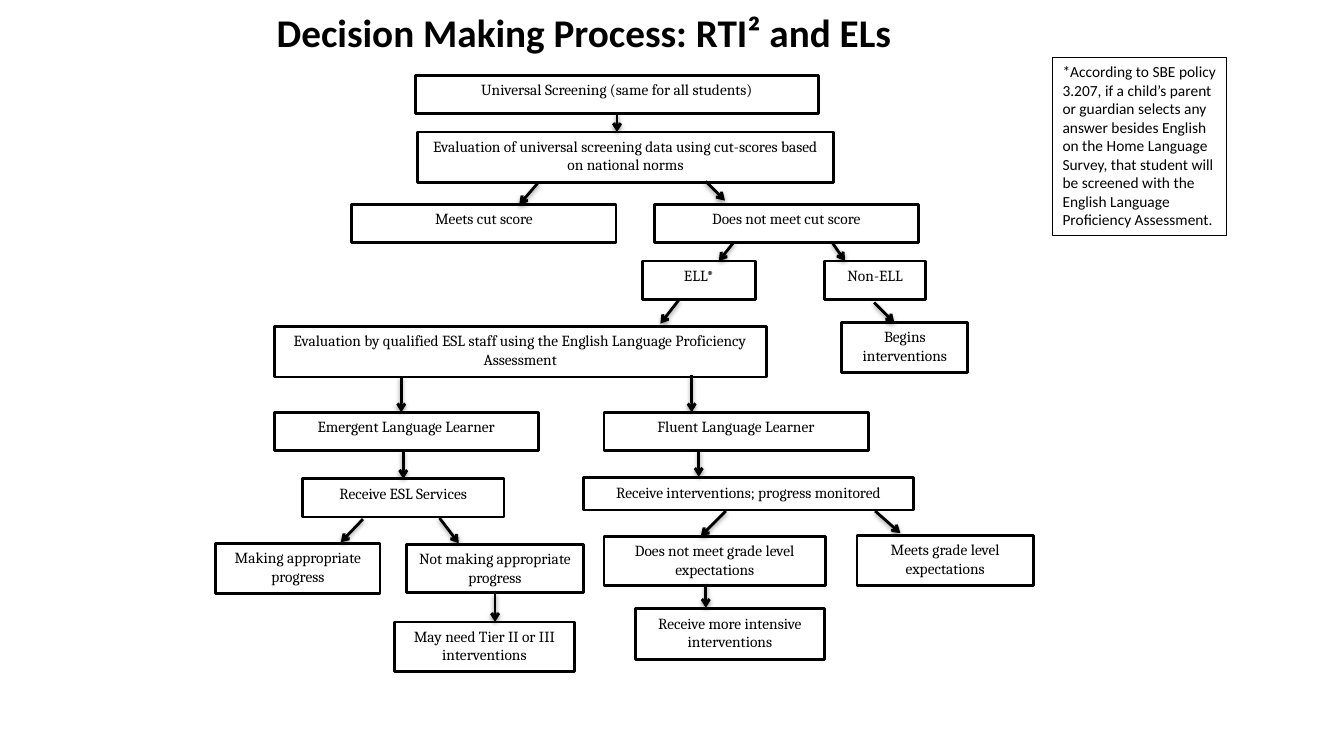
from dataclasses import dataclass

from lxml import etree
from pptx import Presentation
from pptx import util as u
from pptx.dml import color
from pptx.enum import shapes, text
from pptx.oxml import ns

PX = 9144


@dataclass(frozen=True)
class Theme:
    ink: color.RGBColor = color.RGBColor(0, 0, 0)
    paper: color.RGBColor = color.RGBColor(255, 255, 255)
    head: str = "Calibri"
    body: str = "Cambria"
    big: int = 28
    small: int = 11
    thick: float = 2
    thin: float = 0.75


@dataclass(frozen=True)
class Box:
    x: int
    y: int
    w: int
    h: int
    words: str


@dataclass(frozen=True)
class Arrow:
    x1: int
    y1: int
    x2: int
    y2: int


THEME = Theme()
TITLE = Box(138, 20, 882, 23, "Decision Making Process: RTI² and ELs")
NOTE = Box(
    1044, 57, 173, 177,
    "*According to SBE policy 3.207, if a child’s parent or guardian selects "
    "any answer besides English on the Home Language Survey, that student will "
    "be screened with the English Language Proficiency Assessment.",
)
STEPS = [
    Box(412, 75, 400, 38, "Universal Screening (same for all students)"),
    Box(414, 131, 413, 50, "Evaluation of universal screening data using cut-scores based on national norms"),
    Box(349, 203, 262, 38, "Meets cut score"),
    Box(649, 203, 262, 38, "Does not meet cut score"),
    Box(637, 259, 112, 38, "ELL*"),
    Box(818, 259, 100, 38, "Non-ELL"),
    Box(835, 320, 125, 50, "Begins interventions"),
    Box(272, 324, 488, 50, "Evaluation by qualified ESL staff using the English Language Proficiency Assessment"),
    Box(272, 409, 262, 38, "Emergent Language Learner"),
    Box(599, 409, 262, 38, "Fluent Language Learner"),
    Box(300, 475, 200, 38, "Receive ESL Services"),
    Box(579, 474, 327, 32, "Receive interventions; progress monitored"),
    Box(214, 539, 163, 50, "Making appropriate progress"),
    Box(403, 540, 176, 48, "Not making appropriate progress"),
    Box(599, 532, 220, 49, "Does not meet grade level\nexpectations"),
    Box(850, 531, 175, 50, "Meets grade level\nexpectations"),
    Box(391, 617, 179, 49, "May need Tier II or III interventions"),
    Box(630, 604, 188, 50, "Receive more intensive interventions"),
]
ARROWS = [
    Arrow(612, 113, 612, 131),
    Arrow(534, 181, 515, 203),
    Arrow(700, 180, 719, 199),
    Arrow(728, 240, 713, 259),
    Arrow(825, 240, 838, 259),
    Arrow(673, 298, 655, 321),
    Arrow(867, 300, 887, 320),
    Arrow(398, 374, 398, 409),
    Arrow(686, 372, 686, 409),
    Arrow(400, 447, 400, 475),
    Arrow(693, 447, 693, 473),
    Arrow(360, 515, 338, 538),
    Arrow(436, 514, 455, 539),
    Arrow(720, 507, 695, 532),
    Arrow(868, 507, 893, 529),
    Arrow(491, 588, 491, 617),
    Arrow(700, 579, 700, 603),
]


def write(shape, words: str, font: str, size: int, align, bold: bool = False) -> None:
    frame = shape.text_frame
    frame.text = words
    frame.word_wrap = True
    for para in frame.paragraphs:
        para.alignment = align
        for run in para.runs:
            run.font.name = font
            run.font.size = u.Pt(size)
            run.font.bold = bold
            run.font.color.rgb = THEME.ink


def place(shape, box: Box) -> None:
    shape.left, shape.top = box.x * PX, box.y * PX
    shape.width, shape.height = box.w * PX, box.h * PX


def draw_box(slide, box: Box, font: str, width: float, align, filled: bool = True):
    shape = slide.shapes.add_shape(
        shapes.MSO_SHAPE.RECTANGLE, box.x * PX, box.y * PX, box.w * PX, box.h * PX
    )
    shape.shadow.inherit = False
    if filled:
        shape.fill.solid()
        shape.fill.fore_color.rgb = THEME.paper
    else:
        shape.fill.background()
    shape.line.color.rgb = THEME.ink
    shape.line.width = u.Pt(width)
    write(shape, box.words, font, THEME.small, align)
    shape.text_frame.vertical_anchor = text.MSO_ANCHOR.TOP
    return shape


def add_shade(props) -> None:
    effects = etree.SubElement(props, ns.qn("a:effectLst"))
    shade = etree.SubElement(
        effects, ns.qn("a:outerShdw"),
        blurRad="40000", dist="20000", dir="5400000", rotWithShape="0",
    )
    tint = etree.SubElement(shade, ns.qn("a:srgbClr"), val=str(THEME.ink))
    etree.SubElement(tint, ns.qn("a:alpha"), val="38000")


def draw_arrow(slide, arrow: Arrow, steps: list) -> None:
    line = slide.shapes.add_connector(
        shapes.MSO_CONNECTOR.STRAIGHT,
        arrow.x1 * PX, arrow.y1 * PX, arrow.x2 * PX, arrow.y2 * PX,
    )
    line.line.color.rgb = THEME.ink
    line.line.width = u.Pt(THEME.thick)
    props = line.line._get_or_add_ln()
    etree.SubElement(props, ns.qn("a:tailEnd"), type="arrow")
    add_shade(props.getparent())
    for box, shape in steps:
        mid = box.x + box.w / 2
        if (mid, box.y + box.h) == (arrow.x1, arrow.y1):
            line.begin_connect(shape, 2)
        if (mid, box.y) == (arrow.x2, arrow.y2):
            line.end_connect(shape, 0)


def main() -> None:
    deck = Presentation()
    deck.slide_width, deck.slide_height = 1333 * PX, 750 * PX
    slide = deck.slides.add_slide(deck.slide_layouts[5])
    title = slide.shapes.title
    place(title, TITLE)
    write(title, TITLE.words, THEME.head, THEME.big, text.PP_ALIGN.CENTER, True)
    title.text_frame.auto_size = text.MSO_AUTO_SIZE.NONE
    title.text_frame.vertical_anchor = text.MSO_ANCHOR.MIDDLE
    steps = [
        (box, draw_box(slide, box, THEME.body, THEME.thick, text.PP_ALIGN.CENTER))
        for box in STEPS
    ]
    for arrow in ARROWS:
        draw_arrow(slide, arrow, steps)
    note = draw_box(slide, NOTE, THEME.head, THEME.thin, text.PP_ALIGN.LEFT, False)
    note.text_frame.auto_size = text.MSO_AUTO_SIZE.SHAPE_TO_FIT_TEXT
    deck.save("out.pptx")


if __name__ == "__main__":
    main()
